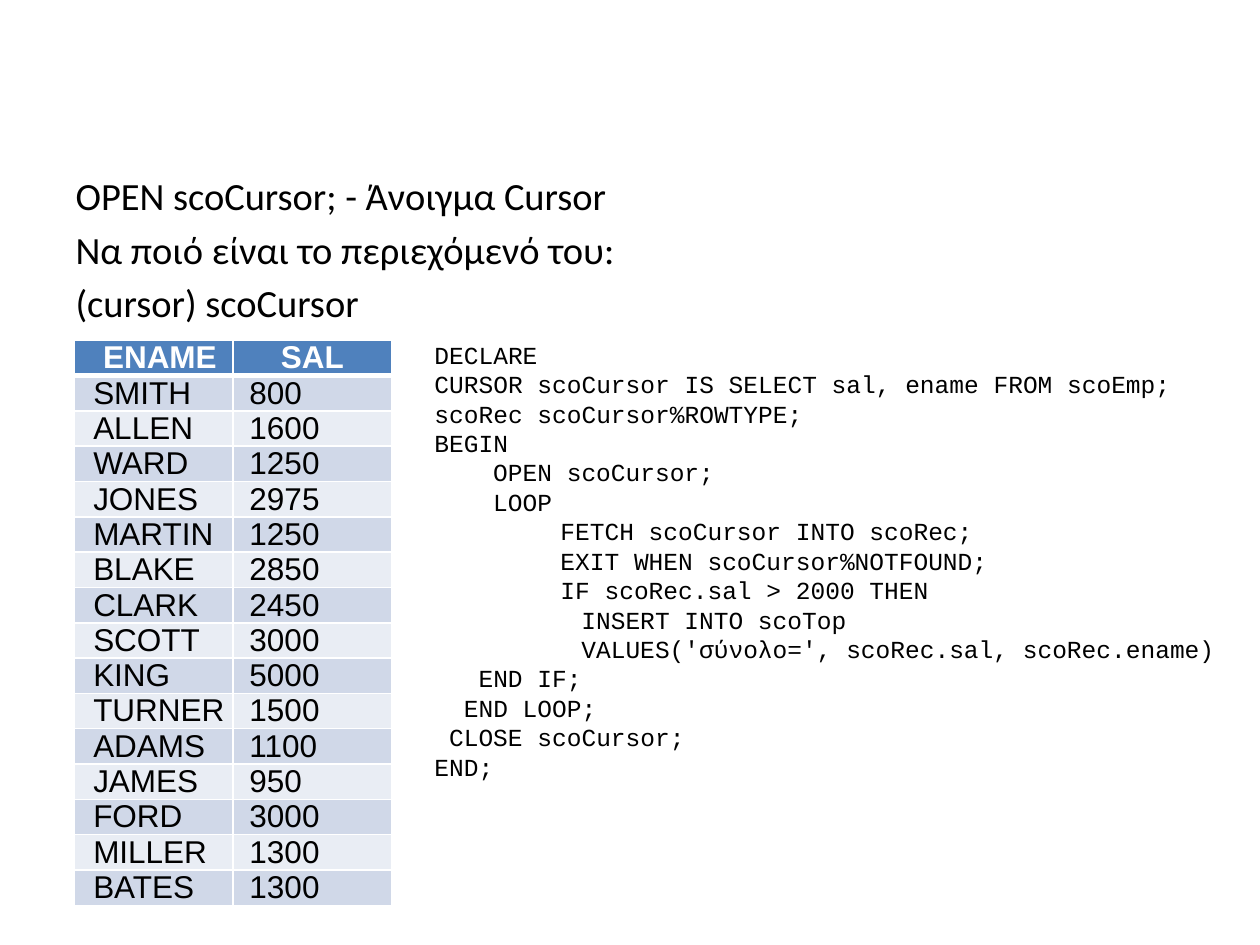
from dataclasses import dataclass

from lxml import etree
from pptx import Presentation
from pptx import util as u
from pptx.dml.color import RGBColor
from pptx.enum import text
from pptx.oxml.ns import qn


@dataclass(frozen=True)
class Theme:
    ink: str = "000000"
    paper: str = "FFFFFF"
    header: str = "4F81BD"
    bands: tuple[str, str] = ("D0D8E8", "E9EDF4")
    body_font: str = "Calibri"
    table_font: str = "Arial"
    code_font: str = "Courier New"
    body_size: int = 22
    table_size: int = 18
    code_size: int = 14
    rule: int = 1
    header_rule: int = 3


@dataclass(frozen=True)
class Box:
    """A frame given as shares of the slide's width and height."""
    left: float
    top: float
    width: float
    height: float

    def lengths(self) -> tuple[int, int, int, int]:
        return (int(self.left * WIDTH), int(self.top * HEIGHT),
                int(self.width * WIDTH), int(self.height * HEIGHT))


@dataclass(frozen=True)
class CodeLine:
    text: str
    indent: float = 0  # in characters


@dataclass(frozen=True)
class Column:
    heading: str
    align: text.PP_ALIGN
    right_margin: float
    indent: float


THEME = Theme()
WIDTH, HEIGHT = u.Inches(10), u.Inches(7.5)
BODY = Box(0.05, 0.175, 0.9, 0.19)
TABLE = Box(0.059, 0.36, 0.252, 0.6)
CODE = Box(0.335, 0.353, 0.646, 0.485)
ROW_HEIGHT = u.Inches(0.28)
CHAR = 0.6 * THEME.code_size  # advance of a Courier character, in points
TAB = 72 / CHAR  # one inch, in characters

INTRO = ["OPEN scoCursor; - Άνοιγμα Cursor",
         "Να ποιό είναι το περιεχόμενό του:",
         "(cursor) scoCursor"]
COLUMNS = [Column("ΕΝΑΜΕ", text.PP_ALIGN.RIGHT, 0.13, 0.14),
           Column("SAL", text.PP_ALIGN.CENTER, 0.01, 0.12)]
EMPLOYEES = [("SMITH", 800), ("ALLEN", 1600), ("WARD", 1250), ("JONES", 2975),
             ("MARTIN", 1250), ("BLAKE", 2850), ("CLARK", 2450),
             ("SCOTT", 3000), ("KING", 5000), ("TURNER", 1500),
             ("ADAMS", 1100), ("JAMES", 950), ("FORD", 3000),
             ("MILLER", 1300), ("BATES", 1300)]
PROGRAM = [
    CodeLine("DECLARE"),
    CodeLine("CURSOR scoCursor IS SELECT sal, ename FROM scoEmp; "
             "scoRec scoCursor%ROWTYPE;"),
    CodeLine("BEGIN"),
    CodeLine("OPEN scoCursor;", 4),
    CodeLine("LOOP", 4),
    CodeLine("FETCH scoCursor INTO scoRec;", TAB),
    CodeLine("EXIT WHEN scoCursor%NOTFOUND;", TAB),
    CodeLine("IF scoRec.sal > 2000 THEN", TAB),
    CodeLine("INSERT INTO scoTop", 10),
    CodeLine("VALUES('σύνολο=', scoRec.sal, scoRec.ename)", 10),
    CodeLine("END IF;", 3),
    CodeLine("END LOOP;", 2),
    CodeLine("CLOSE scoCursor;", 1),
    CodeLine("END;"),
]


def write(p, words: str, font: str, size: int, color: str = THEME.ink,
          bold: bool = False, indent: int = 0) -> None:
    """Fill a paragraph, without bullet, at the given left indent."""
    p.text = words
    pPr = p._p.get_or_add_pPr()
    pPr.set("marL", str(int(indent)))
    pPr.set("indent", "0")
    etree.SubElement(pPr, qn("a:buNone"))
    for r in p.runs:
        r.font.name, r.font.size, r.font.bold = font, u.Pt(size), bold
        r.font.color.rgb = RGBColor.from_string(color)


def paragraphs(tf, count: int) -> list:
    return [tf.paragraphs[0]] + [tf.add_paragraph() for _ in range(count - 1)]


def style_cell(cell, fill: str, right_margin: float, bottom: int) -> None:
    """Set margins, white borders and fill; the borders precede the fill."""
    cell.margin_left, cell.margin_right = u.Inches(0.01), u.Inches(right_margin)
    cell.margin_top = cell.margin_bottom = 0
    tcPr = cell._tc.get_or_add_tcPr()
    for side, width in zip("LRTB", [THEME.rule] * 3 + [bottom]):
        ln = etree.SubElement(tcPr, qn(f"a:ln{side}"), w=str(u.Pt(width)))
        solid = etree.SubElement(ln, qn("a:solidFill"))
        etree.SubElement(solid, qn("a:srgbClr"), val=THEME.paper)
    cell.fill.solid()
    cell.fill.fore_color.rgb = RGBColor.from_string(fill)


def add_intro(slide) -> None:
    sp = slide.placeholders[1]
    sp.left, sp.top, sp.width, sp.height = BODY.lengths()
    tf = sp.text_frame
    tf.auto_size = text.MSO_AUTO_SIZE.NONE
    for p, words in zip(paragraphs(tf, len(INTRO)), INTRO):
        write(p, words, THEME.body_font, THEME.body_size)


def add_salaries(slide) -> None:
    table = slide.shapes.add_table(len(EMPLOYEES) + 1, len(COLUMNS),
                                   *TABLE.lengths()).table
    for row in table.rows:
        row.height = ROW_HEIGHT
    for c, column in enumerate(COLUMNS):
        cell = table.cell(0, c)
        style_cell(cell, THEME.header, column.right_margin, THEME.header_rule)
        p = cell.text_frame.paragraphs[0]
        write(p, column.heading, THEME.table_font, THEME.table_size,
              THEME.paper, bold=True)
        p.alignment = column.align
        for i, employee in enumerate(EMPLOYEES):
            cell = table.cell(i + 1, c)
            style_cell(cell, THEME.bands[i % 2], 0.01, THEME.rule)
            write(cell.text_frame.paragraphs[0], str(employee[c]),
                  THEME.table_font, THEME.table_size,
                  indent=u.Inches(column.indent))


def add_program(slide) -> None:
    tf = slide.shapes.add_textbox(*CODE.lengths()).text_frame
    tf.word_wrap = True
    tf.auto_size = text.MSO_AUTO_SIZE.SHAPE_TO_FIT_TEXT
    for p, line in zip(paragraphs(tf, len(PROGRAM)), PROGRAM):
        write(p, line.text, THEME.code_font, THEME.code_size,
              indent=u.Pt(line.indent * CHAR))


def main() -> None:
    prs = Presentation()
    prs.slide_width, prs.slide_height = WIDTH, HEIGHT
    slide = prs.slides.add_slide(prs.slide_layouts[1])

    # The slide has no title
    title = slide.shapes.title._element
    title.getparent().remove(title)

    # Introduction, cursor contents, PL/SQL block
    add_intro(slide)
    add_salaries(slide)
    add_program(slide)
    prs.save("out.pptx")


if __name__ == "__main__":
    main()
